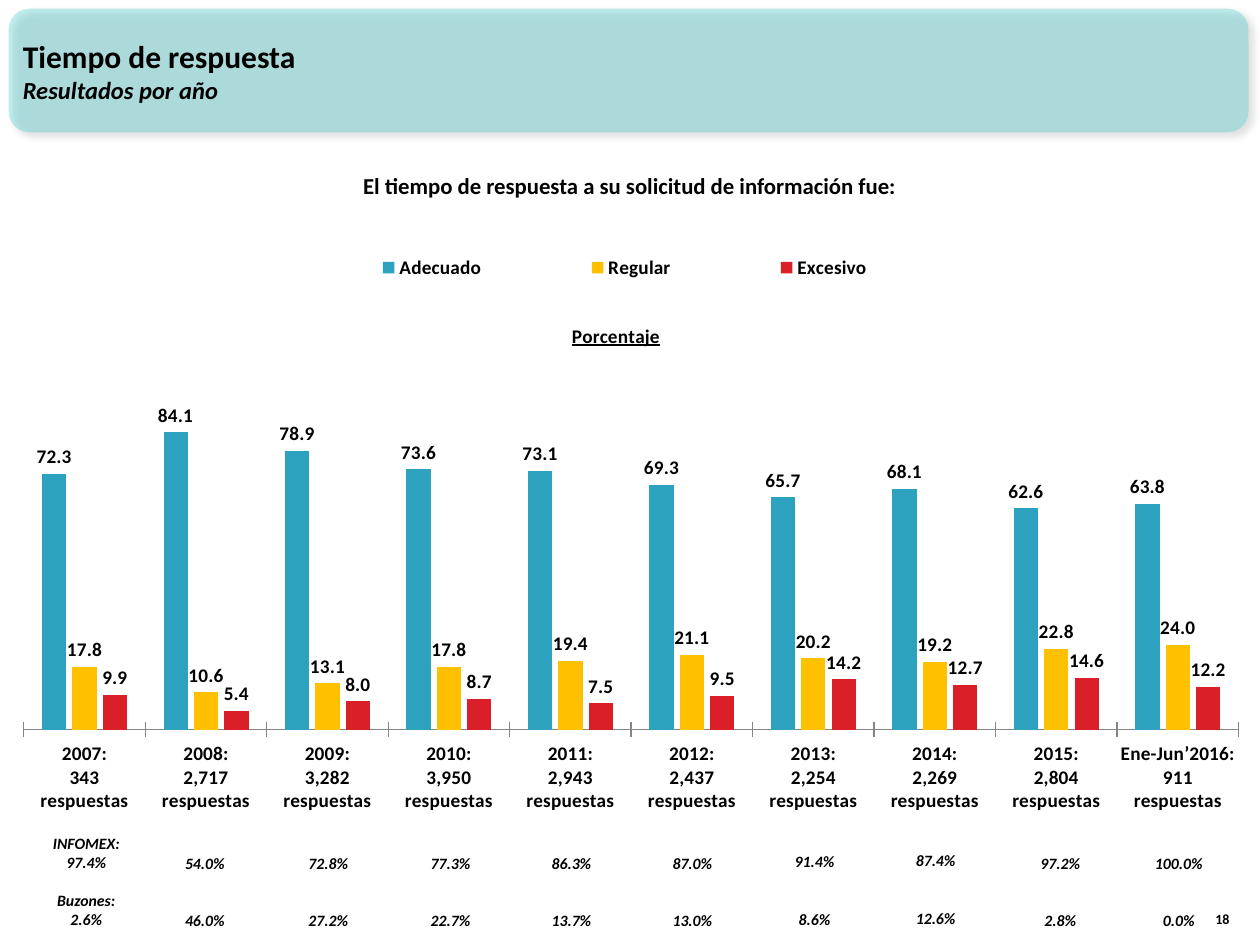
from dataclasses import dataclass

from lxml.etree import SubElement
from pptx import Presentation
from pptx.chart.data import CategoryChartData
from pptx.dml.color import RGBColor
from pptx.enum.chart import XL_CHART_TYPE, XL_LABEL_POSITION, XL_LEGEND_POSITION, XL_TICK_MARK
from pptx.enum.shapes import MSO_SHAPE
from pptx.enum.text import MSO_ANCHOR, MSO_AUTO_SIZE, PP_ALIGN
from pptx.oxml import parse_xml
from pptx.oxml.ns import nsdecls, qn
from pptx.util import Pt

FONT = "Calibri"
BLACK = "000000"
LINE = 11


@dataclass
class Year:
    label: str
    count: str
    rates: tuple
    left: float
    top: float
    web: str
    box: str


@dataclass
class Answer:
    name: str
    fill: str


YEARS = [
    Year("2007", "343", (72.3, 17.8, 9.9), 19.4, 473, "INFOMEX: 97.4%", "Buzones: 2.6%"),
    Year("2008", "2,717", (84.1, 10.6, 5.4), 95.8, 473, "54.0%", "46.0%"),
    Year("2009", "3,282", (78.9, 13.1, 8.0), 166.3, 473, "72.8%", "27.2%"),
    Year("2010", "3,950", (73.6, 17.8, 8.7), 236.2, 473, "77.3%", "22.7%"),
    Year("2011", "2,943", (73.1, 19.4, 7.5), 305.3, 473, "86.3%", "13.7%"),
    Year("2012", "2,437", (69.3, 21.1, 9.5), 374.4, 473, "87.0%", "13.0%"),
    Year("2013", "2,254", (65.7, 20.2, 14.2), 444.2, 472.3, "91.4%", "8.6%"),
    Year("2014", "2,269", (68.1, 19.2, 12.7), 513.4, 471.6, "87.4%", "12.6%"),
    Year("2015", "2,804", (62.6, 22.8, 14.6), 584.6, 473, "97.2%", "2.8%"),
    Year("Ene-Jun’2016", "911", (63.8, 24.0, 12.2), 652.3, 473, "100.0%", "0.0%"),
]
ANSWERS = [Answer("Adecuado", "2DA2BF"), Answer("Regular", "FFC000"), Answer("Excesivo", "DA1F28")]


def color(code: str) -> RGBColor:
    return RGBColor.from_string(code)


def style(font, size: float, slant: bool = False) -> None:
    font.name, font.size = FONT, Pt(size)
    font.bold, font.italic = True, slant
    font.color.rgb = color(BLACK)


def write(frame, text: str, size: float = 9, slant: bool = False,
          align=PP_ALIGN.CENTER, before: float = 0) -> None:
    par = frame.add_paragraph() if frame.text else frame.paragraphs[0]
    par.alignment, par.space_before = align, Pt(before)
    run = par.add_run()
    run.text = text
    style(run.font, size, slant)


def add_box(slide, left: float, top: float, wide: float, high: float, wrap: bool = True):
    frame = slide.shapes.add_textbox(Pt(left), Pt(top), Pt(wide), Pt(high)).text_frame
    frame.word_wrap = wrap
    frame.auto_size = MSO_AUTO_SIZE.NONE
    return frame


def add_banner(slide) -> None:
    title = slide.shapes.title
    panel = slide.shapes.add_shape(MSO_SHAPE.ROUNDED_RECTANGLE, Pt(5), Pt(5), Pt(708.5), Pt(70.6))
    panel.shadow.inherit = False
    panel.fill.solid()
    panel.fill.fore_color.rgb = color("33CCCC")
    panel.line.fill.background()
    props = panel.element.spPr
    SubElement(props.find(".//" + qn("a:srgbClr")), qn("a:alpha"), val="30000")
    glow = props.find(qn("a:effectLst"))
    shade = SubElement(glow, qn("a:outerShdw"), blurRad=str(Pt(4)), dist=str(Pt(3)),
                       dir="2700000", algn="tl", rotWithShape="0")
    SubElement(SubElement(shade, qn("a:srgbClr"), val=BLACK), qn("a:alpha"), val="40000")
    title.element.addprevious(panel.element)

    title.left, title.top, title.width, title.height = Pt(5.8), Pt(6.5), Pt(660), Pt(67.7)
    frame = title.text_frame
    frame.word_wrap = True
    frame.auto_size = MSO_AUTO_SIZE.NONE
    frame.vertical_anchor = MSO_ANCHOR.MIDDLE
    write(frame, "Tiempo de respuesta", size=18, align=PP_ALIGN.LEFT)
    write(frame, "Resultados por año", size=14, slant=True, align=PP_ALIGN.LEFT)


def make_place(inner: bool = False, **spots: float):
    target = '<c:layoutTarget val="inner"/>' if inner else ""
    modes = "".join(f'<c:{key}Mode val="edge"/>' for key in spots if key in "xy")
    sizes = "".join(f'<c:{key} val="{val}"/>' for key, val in spots.items())
    return parse_xml(f'<c:layout {nsdecls("c")}><c:manualLayout>{target}{modes}{sizes}'
                     '</c:manualLayout></c:layout>')


def set_place(node, index: int, place) -> None:
    for old in node.findall(qn("c:layout")):
        node.remove(old)
    node.insert(index, place)


def add_bars(slide) -> None:
    data = CategoryChartData(number_format="0.0")
    data.categories = [f"{year.label}:\n{year.count}\nrespuestas" for year in YEARS]
    for index, answer in enumerate(ANSWERS):
        data.add_series(answer.name, [year.rates[index] for year in YEARS])
    chart = slide.shapes.add_chart(XL_CHART_TYPE.COLUMN_CLUSTERED, Pt(1.4), Pt(134),
                                   Pt(718.6), Pt(345.6), data).chart
    style(chart.font, 11)

    chart.has_title = True
    head = chart.chart_title
    write(head.text_frame, "Porcentaje", size=11)
    head.text_frame.paragraphs[0].runs[0].font.underline = True
    head.include_in_layout = False
    chart.has_legend = True
    chart.legend.position = XL_LEGEND_POSITION.TOP
    chart.legend.include_in_layout = False
    style(chart.legend.font, 11)

    space = chart.element.chart
    set_place(space.find(qn("c:title")), 1, make_place(x=0.45, y=0.14))
    set_place(space.find(qn("c:legend")), 1, make_place(x=0.22, y=0.02, w=0.55, h=0.07))
    set_place(space.plotArea, 0, make_place(True, x=0.017, y=0.234, w=0.966, h=0.585))

    scale = chart.value_axis
    scale.minimum_scale, scale.maximum_scale, scale.major_unit = 0, 100, 20
    scale.has_major_gridlines = False
    scale.visible = False
    axis = chart.category_axis
    axis.major_tick_mark = XL_TICK_MARK.CROSS
    axis.format.line.color.rgb = color("868686")
    style(axis.tick_labels.font, 11)

    plot = chart.plots[0]
    plot.gap_width, plot.overlap, plot.vary_by_categories = 150, -25, False
    for answer, series in zip(ANSWERS, plot.series):
        series.format.fill.solid()
        series.format.fill.fore_color.rgb = color(answer.fill)
        labels = series.data_labels
        labels.show_value = True
        labels.number_format, labels.number_format_is_linked = "0.0", False
        labels.position = XL_LABEL_POSITION.OUTSIDE_END
        style(labels.font, 11)


def add_shares(slide) -> None:
    for index, year in enumerate(YEARS):
        first = index == 0
        frame = add_box(slide, year.left, year.top, 59.8 if first else 42.5, 62, wrap=first)
        frame.margin_top = Pt(3.6 if first else 3.6 + LINE)
        write(frame, year.web, slant=True)
        write(frame, year.box, slant=True, before=LINE if first else 2 * LINE)


def main() -> None:
    deck = Presentation()
    deck.slide_width, deck.slide_height = Pt(720), Pt(540)
    slide = deck.slides.add_slide(deck.slide_layouts[5])
    add_banner(slide)
    page = add_box(slide, 681, 504.7, 28.8, 28.8)
    page.vertical_anchor = MSO_ANCHOR.BOTTOM
    write(page, "18", size=8, align=PP_ALIGN.RIGHT)
    ask = add_box(slide, 64, 94.3, 591, 23)
    write(ask, "El tiempo de respuesta a su solicitud de información fue:", size=13)
    add_bars(slide)
    add_shares(slide)
    deck.save("out.pptx")


if __name__ == "__main__":
    main()
